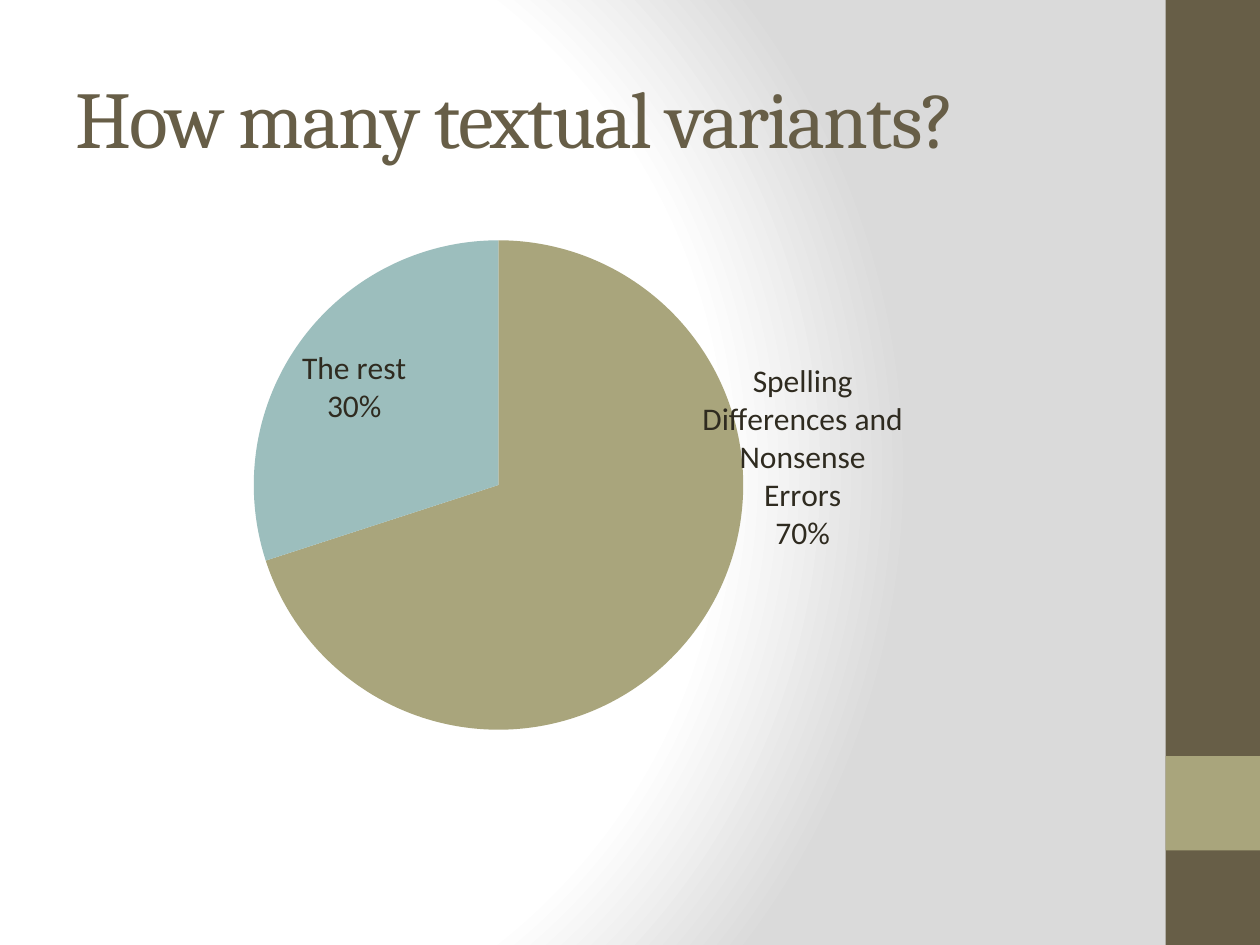
import pptx
import pptx.chart.data
import pptx.dml.color
import pptx.enum.chart
import pptx.enum.shapes
import pptx.enum.text
import pptx.oxml
import pptx.oxml.ns
import pptx.util

RGBColor = pptx.dml.color.RGBColor
Inches = pptx.util.Inches
Pt = pptx.util.Pt
qn = pptx.oxml.ns.qn

BROWN = RGBColor(0x67, 0x5E, 0x47)
OLIVE = RGBColor(0xA9, 0xA5, 0x7C)
TEAL = RGBColor(0x9C, 0xBE, 0xBD)
INK = RGBColor(0x2F, 0x2B, 0x20)
WHITE = RGBColor(0xFF, 0xFF, 0xFF)
GREY = RGBColor(0xDA, 0xDA, 0xDA)


def layout_xml(**values):
    """Return a manual chart layout with the given settings."""
    items = "".join(f'<c:{k} val="{v}"/>' for k, v in values.items())
    return pptx.oxml.parse_xml(
        f'<c:layout {pptx.oxml.ns.nsdecls("c")}><c:manualLayout>{items}'
        "</c:manualLayout></c:layout>")


class SlideBuilder:
    title_font = {"name": "Cambria", "size": Pt(46), "bold": False}
    chart_font = {"name": "Calibri", "size": Pt(18), "bold": False}

    def __init__(self, prs):
        self.s = prs.slides.add_slide(prs.slide_layouts[5])

    def format_font(self, font, values, color):
        for name, value in values.items():
            setattr(font, name, value)
        font.color.rgb = color

    def background(self, stops):
        self.s.background.fill.gradient()
        old = self.s.element.find(".//" + qn("a:gradFill"))
        gs = "".join(f'<a:gs pos="{pos * 1000}"><a:srgbClr val="{color}"/></a:gs>'
                     for pos, color in stops)
        new = pptx.oxml.parse_xml(
            f'<a:gradFill {pptx.oxml.ns.nsdecls("a")} rotWithShape="1">'
            f'<a:gsLst>{gs}</a:gsLst><a:path path="circle">'
            '<a:fillToRect l="20000" t="50000" r="100000" b="50000"/>'
            "</a:path></a:gradFill>")
        old.getparent().replace(old, new)

    def rect(self, box, color):
        sp = self.s.shapes.add_shape(
            pptx.enum.shapes.MSO_SHAPE.RECTANGLE, *map(Inches, box))
        sp.shadow.inherit = False
        sp.fill.solid()
        sp.fill.fore_color.rgb = color
        sp.line.fill.background()

    def title(self, box, text):
        sp = self.s.shapes.title
        sp.left, sp.top, sp.width, sp.height = map(Inches, box)
        tf = sp.text_frame
        tf.vertical_anchor = pptx.enum.text.MSO_ANCHOR.MIDDLE
        p = tf.paragraphs[0]
        p.alignment = pptx.enum.text.PP_ALIGN.LEFT
        r = p.add_run()
        r.text = text
        self.format_font(r.font, self.title_font, BROWN)
        r.font._element.set("spc", "-100")

    def pie(self, box, shares, colors):
        data = pptx.chart.data.CategoryChartData()
        data.categories = list(shares)
        data.add_series("Series 1", list(shares.values()))
        chart = self.s.shapes.add_chart(
            pptx.enum.chart.XL_CHART_TYPE.PIE, *map(Inches, box), data).chart
        chart.has_title = False
        chart.has_legend = False
        self.format_font(chart.font, self.chart_font, INK)
        plot = chart.plots[0]
        plot.vary_by_categories = True
        series = plot.series[0]
        for i, color in enumerate(colors):
            fill = series.points[i].format.fill
            fill.solid()
            fill.fore_color.rgb = color

        # Plot area
        area = plot._element.getparent()
        for old in area.findall(qn("c:layout")):
            area.remove(old)
        area.insert(0, layout_xml(layoutTarget="inner", xMode="edge", yMode="edge",
                                  x=0.18, y=0.03, w=0.47, h=0.74))

        # Category and percentage labels, the first one moved up
        best_fit = pptx.enum.chart.XL_LABEL_POSITION.BEST_FIT
        labels = series.data_labels
        self.format_font(labels.font, self.chart_font, INK)
        labels.position = best_fit
        label = series.points[0].data_label
        self.format_font(label.font, self.chart_font, INK)
        label.position = best_fit
        dlbls = labels._element
        dlbl = dlbls.find(qn("c:dLbl"))
        dlbl.find(qn("c:idx")).addnext(layout_xml(x=0, y=-0.41))
        shown = {"c:showLegendKey": 0, "c:showVal": 0, "c:showCatName": 1,
                 "c:showSerName": 0, "c:showPercent": 1, "c:showBubbleSize": 0}
        for group in (dlbls, dlbl):
            for tag, value in shown.items():
                item = group.find(qn(tag))
                if item is not None:
                    item.set("val", str(value))
            sep = pptx.oxml.parse_xml(
                f'<c:separator {pptx.oxml.ns.nsdecls("c")}>\n</c:separator>')
            last = [e for e in group if e.tag in map(qn, shown)][-1]
            last.addnext(sep)


def main():
    prs = pptx.Presentation()
    prs.slide_width, prs.slide_height = Inches(10), Inches(7.5)
    b = SlideBuilder(prs)

    # Background and side band
    b.background([(0, WHITE), (75, WHITE), (100, GREY)])
    b.rect((9.25, 0, 0.75, 7.5), BROWN)
    b.rect((9.25, 6, 0.75, 0.75), OLIVE)

    # Title and chart
    b.title((0.5, 0.3, 8.33, 1.25), "How many textual variants?")
    b.pie((0.5, 1.75, 8.33, 5.25),
          {"Spelling Differences and Nonsense Errors": 70, "The rest": 30},
          [OLIVE, TEAL])

    prs.save("out.pptx")


if __name__ == "__main__":
    main()
